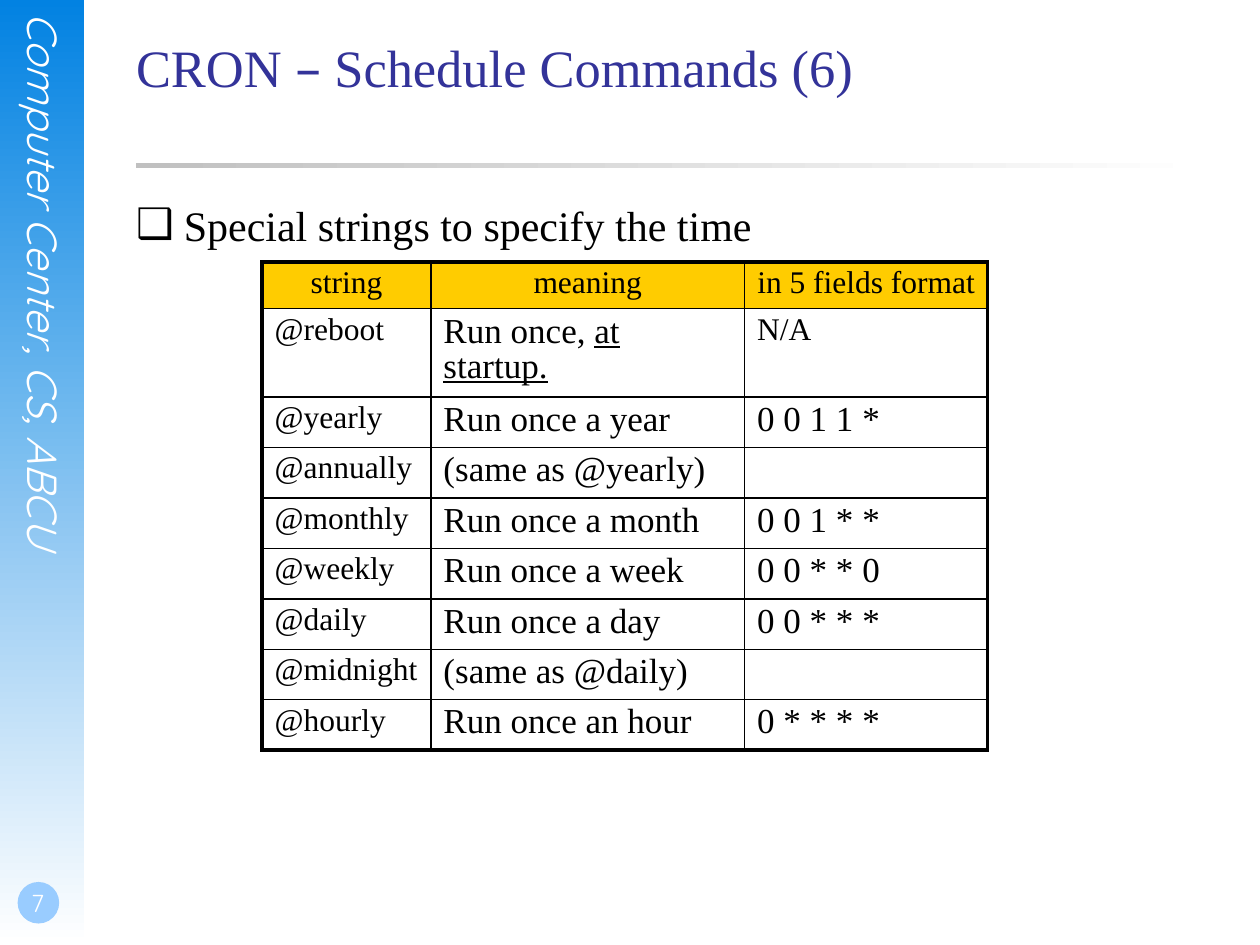
"""Build a slide on the special time strings of cron."""
from lxml import etree
from pptx import Presentation
from pptx.dml.color import RGBColor
from pptx.enum.shapes import MSO_SHAPE
from pptx.enum.text import MSO_ANCHOR, PP_ALIGN
from pptx.oxml.ns import qn
from pptx.util import Inches, Pt

RECTANGLE, OVAL = MSO_SHAPE.RECTANGLE, MSO_SHAPE.OVAL
LEFT, CENTER = PP_ALIGN.LEFT, PP_ALIGN.CENTER
TOP, BOTTOM = MSO_ANCHOR.TOP, MSO_ANCHOR.BOTTOM
COLORS = {
    "band": "0282E2", "white": "FFFFFF", "badge": "99CCFF", "rule": "C0C0C0",
    "title": "333399", "black": "000000", "header": "FFCC00",
}
SERIF, SANS, SYMBOL = "Times New Roman", "Quicksand", "DejaVu Sans"
CELL_MARGINS = {
    "margin_left": Inches(0.1), "margin_right": Inches(0.1),
    "margin_top": Inches(0.05), "margin_bottom": Inches(0.05),
}
COLUMN_WIDTHS = [1.34, 2.49, 1.93]
HEADER_HEIGHT, ROW_HEIGHT = 0.37, 0.4
THIN, THICK = 1, 2.25
ROWS = [
    ("string", "meaning", "in 5 fields format"),
    ("@reboot", "Run once, ", "N/A"),
    ("@yearly", "Run once a year", "0 0 1 1 *"),
    ("@annually", "(same as @yearly)", ""),
    ("@monthly", "Run once a month", "0 0 1 * *"),
    ("@weekly", "Run once a week", "0 0 * * 0"),
    ("@daily", "Run once a day", "0 0 * * *"),
    ("@midnight", "(same as @daily)", ""),
    ("@hourly", "Run once an hour", "0 * * * *"),
]


def color(name):
    """Return the named color."""
    return RGBColor.from_string(COLORS[name])


def apply(target, values):
    """Set each attribute in values on the target."""
    for name, value in values.items():
        setattr(target, name, value)


def add_span(para, text, size, font=SERIF, shade="black", **styles):
    """Append formatted text to a paragraph."""
    span = para.add_run()
    span.text = text
    apply(span.font, {"size": Pt(size), "name": font, **styles})
    span.font.color.rgb = color(shade)


def add_shape(page, kind, area, shade, angle=None):
    """Add a borderless shape, fading to white when an angle is given."""
    shape = page.shapes.add_shape(kind, *map(Inches, area))
    shape.shadow.inherit = False
    shape.line.fill.background()
    if angle is None:
        shape.fill.solid()
        shape.fill.fore_color.rgb = color(shade)
    else:
        shape.fill.gradient()
        shape.fill.gradient_angle = angle
        for stop, name in zip(shape.fill.gradient_stops, (shade, "white")):
            stop.color.rgb = color(name)


def add_text(page, area, spans, align=LEFT, anchor=TOP, margins=(0, 0, 0, 0)):
    """Add a wrapped text box and return its frame."""
    frame = page.shapes.add_textbox(*map(Inches, area)).text_frame
    left, top, right, bottom = map(Inches, margins)
    apply(frame, {
        "word_wrap": True, "vertical_anchor": anchor,
        "margin_left": left, "margin_top": top,
        "margin_right": right, "margin_bottom": bottom,
    })
    para = frame.paragraphs[0]
    para.alignment = align
    for text, format_values in spans:
        add_span(para, text, **format_values)
    return frame


def add_bullet(para, symbol, indent):
    """Give a paragraph a hanging bullet."""
    para.space_before = Pt(6)
    properties = para._p.get_or_add_pPr()
    properties.set("marL", str(Inches(indent)))
    properties.set("indent", str(-Inches(indent)))
    etree.SubElement(properties, qn("a:buFont"), typeface=SYMBOL)
    etree.SubElement(properties, qn("a:buChar"), char=symbol)


def set_borders(cell, widths):
    """Draw the cell borders in left, right, top, bottom order."""
    properties = cell._tc.get_or_add_tcPr()
    for position, (side, width) in enumerate(zip("LRTB", widths)):
        line = etree.Element(qn(f"a:ln{side}"), w=str(Pt(width)))
        fill = etree.SubElement(line, qn("a:solidFill"))
        etree.SubElement(fill, qn("a:srgbClr"), val=COLORS["black"])
        properties.insert(position, line)


def fill_cell(cell, text, row, column):
    """Write and format one cell of the table."""
    is_header = row == 0
    apply(cell, CELL_MARGINS)
    if is_header:
        cell.fill.solid()
        cell.fill.fore_color.rgb = color("header")
    else:
        cell.fill.background()
    para = cell.text_frame.paragraphs[0]
    apply(para, {"alignment": CENTER if is_header else LEFT, "line_spacing": 0.9})
    is_small = is_header or column == 0 or text == "N/A"
    if text:
        add_span(para, text, 18 if is_small else 20)
    edges = (column == 0, column == len(COLUMN_WIDTHS) - 1, is_header, row == len(ROWS) - 1)
    set_borders(cell, [THICK if edge else THIN for edge in edges])


def add_schedule_table(page, left, top):
    """Add the table of special strings."""
    heights = [HEADER_HEIGHT] + [ROW_HEIGHT] * (len(ROWS) - 1)
    area = map(Inches, (left, top, sum(COLUMN_WIDTHS), sum(heights)))
    table = page.shapes.add_table(len(ROWS), len(COLUMN_WIDTHS), *area).table
    apply(table, {"first_row": False, "horz_banding": False})
    for column, width in zip(table.columns, COLUMN_WIDTHS):
        column.width = Inches(width)
    for row, height in zip(table.rows, heights):
        row.height = Inches(height)
    for row, texts in enumerate(ROWS):
        for column, text in enumerate(texts):
            fill_cell(table.cell(row, column), text, row, column)
    reboot = table.cell(1, 1).text_frame.paragraphs[0]
    add_span(reboot, "at startup.", 20, underline=True)


def add_sidebar(page):
    """Add the side band with its vertical label and page number."""
    label = {"size": 24, "font": SANS, "shade": "white", "italic": True}
    number = {"size": 14, "font": SANS, "shade": "white"}
    add_shape(page, RECTANGLE, (0, 0, 0.67, 7.5), "band", 270)
    frame = add_text(page, (0.15, 0.1, 0.4, 5.11), [("Computer Center, CS, ABCU", label)])
    frame._txBody.bodyPr.set("vert", "eaVert")
    add_shape(page, OVAL, (0.14, 7, 0.33, 0.33), "badge")
    add_text(page, (0, 6.83, 0.58, 0.5), [("7", number)], CENTER, BOTTOM, (0.02, 0, 0, 0.05))


def main():
    """Build and save the deck."""
    deck = Presentation()
    deck.slide_width, deck.slide_height = Inches(10), Inches(7.5)
    page = deck.slides.add_slide(deck.slide_layouts[6])
    add_sidebar(page)
    add_shape(page, RECTANGLE, (1.08, 1.29, 8.5, 0.04), "rule", 0)
    heading = {"size": 30, "shade": "title"}
    add_text(page, (1.08, 0.28, 8.5, 1.25), [
        ("CRON ", heading),
        ("–", {**heading, "font": SYMBOL}),
        (" Schedule Commands (6)", heading),
    ])
    body = add_text(page, (1.08, 1.58, 8.5, 5.08),
                    [("Special strings to specify the time", {"size": 24})])
    add_bullet(body.paragraphs[0], "❑", 0.38)
    add_schedule_table(page, 2.08, 2.08)
    deck.save("out.pptx")


if __name__ == "__main__":
    main()
